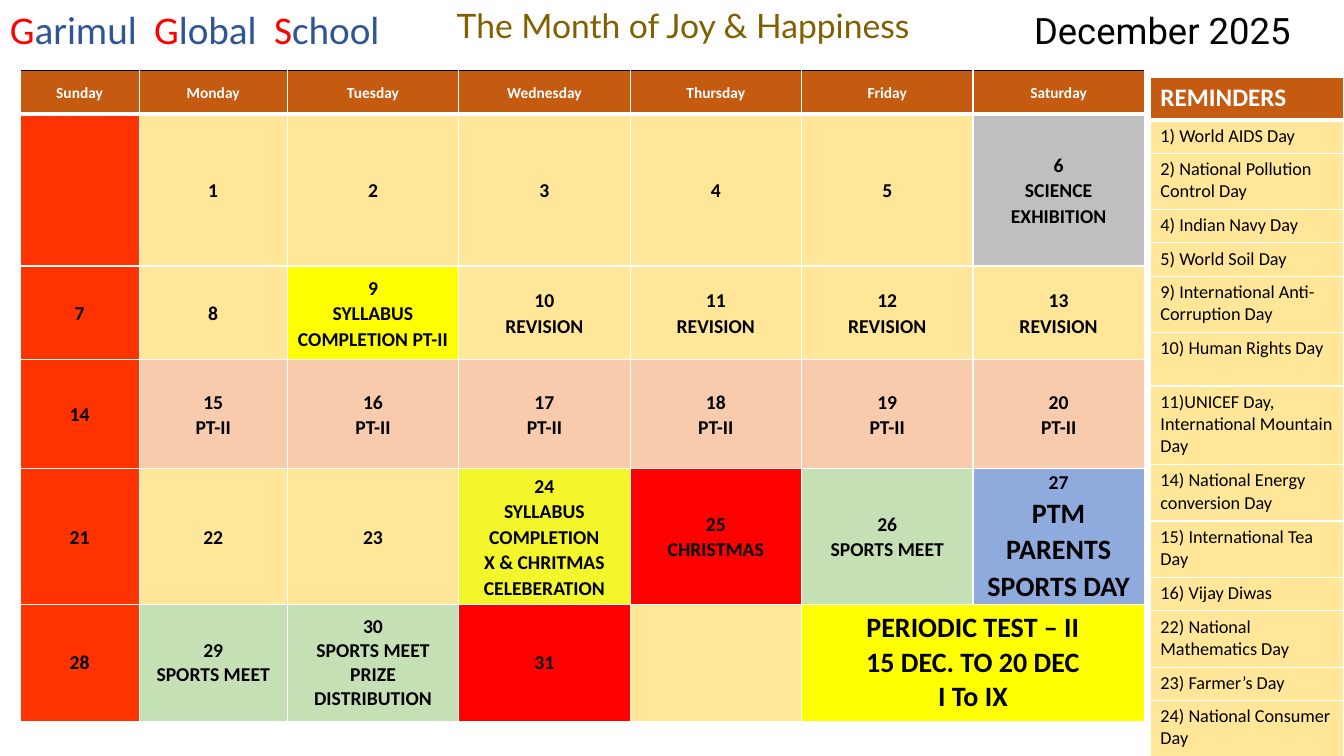
from dataclasses import dataclass

from lxml.etree import SubElement
from pptx import Presentation
from pptx.dml.color import RGBColor
from pptx.enum.shapes import MSO_SHAPE
from pptx.enum.text import MSO_ANCHOR, MSO_AUTO_SIZE, PP_ALIGN
from pptx.oxml.ns import qn
from pptx.util import Inches, Pt

COLORS = {
    "white": "FFFFFF", "black": "000000", "header": "C55A11", "sunday": "FF3300",
    "plain": "FFE699", "exhibition": "BFBFBF", "syllabus": "FFFF00", "test": "F8CBAD",
    "celebration": "F4F62C", "holiday": "FF0000", "sports": "C5E0B4", "parents": "8FAADC",
    "gold": "806000", "initial": "FF0000", "navy": "2F5597",
}


@dataclass(frozen=True)
class TextStyle:
    """Look of a run and its paragraph."""

    size: float
    color: str = "black"
    bold: bool = False
    font: str = "Calibri"
    align: PP_ALIGN = PP_ALIGN.CENTER
    spacing: float = 1.0


@dataclass(frozen=True)
class Event:
    """What happens on a day and how its cell is filled."""

    fill: str
    notes: tuple[str, ...] = ()
    note_size: float = 14


WEEKDAYS = ["Sunday", "Monday", "Tuesday", "Wednesday", "Thursday", "Friday", "Saturday"]
DAY_WIDTHS = [1.18, 1.47] + [1.7] * 5
WEEK_HEIGHTS = [0.43, 1.51, 0.93, 1.08, 1.32, 1.16]
LAST_DAY = 31
EVENTS = {
    6: Event("exhibition", ("SCIENCE EXHIBITION",)),
    9: Event("syllabus", ("SYLLABUS COMPLETION PT-II",)),
    **{day: Event("plain", ("REVISION",)) for day in range(10, 14)},
    **{day: Event("test", ("PT-II",)) for day in range(15, 21)},
    24: Event("celebration", ("SYLLABUS COMPLETION", "X & CHRITMAS CELEBERATION")),
    25: Event("holiday", ("CHRISTMAS",)),
    26: Event("sports", ("SPORTS MEET",)),
    27: Event("parents", ("PTM PARENTS SPORTS DAY",), 20),
    29: Event("sports", ("SPORTS MEET",)),
    30: Event("sports", ("SPORTS MEET", "PRIZE DISTRIBUTION")),
    31: Event("holiday"),
}
TEST_NOTICE = ["PERIODIC TEST – II", "15 DEC. TO 20 DEC", "I To IX"]
REMINDERS = [
    ("1) World AIDS Day", 0.33),
    ("2) National Pollution Control Day", 0.56),
    ("4) Indian Navy Day", 0.33),
    ("5) World Soil Day", 0.33),
    ("9) International Anti-Corruption Day", 0.56),
    ("10) Human Rights Day", 0.53),
    ("11)UNICEF Day, International Mountain Day", 0.78),
    ("14) National Energy conversion Day", 0.56),
    ("15) International Tea Day", 0.56),
    ("16) Vijay Diwas", 0.33),
    ("22) National Mathematics Day", 0.56),
    ("23) Farmer’s Day", 0.33),
    ("24) National Consumer Day", 0.56),
]
SCHOOL_NAME = [("G", "arimul\t"), ("G", "lobal\t"), ("S", "chool")]
SCHOOL_TABS = [1.43, 2.62]


def rgb(name: str) -> RGBColor:
    """Look up a named colour."""
    return RGBColor.from_string(COLORS[name])


def add_span(para, text: str, style: TextStyle) -> None:
    """Add one formatted run."""
    span = para.add_run()
    span.text = text
    span.font.name = style.font
    span.font.size = Pt(style.size)
    span.font.bold = style.bold
    span.font.color.rgb = rgb(style.color)


def write_lines(frame, lines: list[tuple[str, TextStyle]]) -> None:
    """Write one paragraph for each styled line."""
    for index, (text, style) in enumerate(lines):
        para = frame.add_paragraph() if index else frame.paragraphs[0]
        para.alignment = style.align
        para.line_spacing = style.spacing
        add_span(para, text, style)


def set_borders(cell, top: float, bottom: float, top_color: str = "white") -> None:
    """Draw the four sides of a cell."""
    properties = cell._tc.get_or_add_tcPr()
    sides = [("lnL", 1, "white"), ("lnR", 1, "white"), ("lnT", top, top_color), ("lnB", bottom, "white")]
    for tag, width, color in sides:
        line = SubElement(properties, qn(f"a:{tag}"), w=str(Pt(width)))
        fill = SubElement(line, qn("a:solidFill"))
        SubElement(fill, qn("a:srgbClr"), val=COLORS[color])


def add_grid(page, left: float, top: float, widths: list[float], heights: list[float], header_top: str):
    """Add a bordered table with a thick rule under its header."""
    table = page.shapes.add_table(
        len(heights), len(widths), Inches(left), Inches(top), Inches(sum(widths)), Inches(sum(heights))
    ).table
    table.first_row = table.horz_banding = False
    for column, width in zip(table.columns, widths):
        column.width = Inches(width)
    for index, (row, height) in enumerate(zip(table.rows, heights)):
        row.height = Inches(height)
        for cell in row.cells:
            set_borders(cell, 3 if index == 1 else 1, 1 if index else 3, "white" if index else header_top)
    return table


def fill_cell(cell, fill: str, lines: list[tuple[str, TextStyle]]) -> None:
    """Colour a cell and write its lines."""
    cell.fill.solid()
    cell.fill.fore_color.rgb = rgb(fill)
    if lines:
        write_lines(cell.text_frame, lines)


def fill_day_cell(cell, fill: str, lines: list[tuple[str, TextStyle]]) -> None:
    """Fill a calendar cell, centred with narrow margins."""
    cell.vertical_anchor = MSO_ANCHOR.MIDDLE
    cell.margin_left = cell.margin_right = Inches(0.07)
    cell.margin_top = cell.margin_bottom = 0
    fill_cell(cell, fill, lines)


def add_calendar(page) -> None:
    """Add the month grid, numbering days by week and weekday."""
    table = add_grid(page, 0.2, 0.7, DAY_WIDTHS, WEEK_HEIGHTS, "black")
    header = TextStyle(11, "white", True, spacing=1.07)
    last_week = len(WEEK_HEIGHTS) - 2
    table.cell(last_week + 1, 5).merge(table.cell(last_week + 1, 6))
    for column, weekday in enumerate(WEEKDAYS):
        fill_day_cell(table.cell(0, column), "header", [(weekday, header)])
        for week in range(last_week + 1):
            cell = table.cell(week + 1, column)
            if cell.is_spanned:
                continue
            if cell.is_merge_origin:
                notice = TextStyle(20, bold=True)
                fill_day_cell(cell, "syllabus", [(text, notice) for text in TEST_NOTICE])
                continue
            day = 7 * week + column
            event = EVENTS.get(day, Event("plain" if column else "sunday"))
            spacing = 1.0 if week == last_week else 1.07
            lines = [(str(day), TextStyle(14, bold=True, spacing=spacing))]
            note = TextStyle(event.note_size, bold=True, spacing=spacing)
            lines += [(text, note) for text in event.notes]
            fill_day_cell(cell, event.fill, lines if 1 <= day <= LAST_DAY else [])


def add_reminders(page) -> None:
    """Add the list of special days."""
    heights = [0.42] + [height for _, height in REMINDERS]
    table = add_grid(page, 11.41, 0.77, [1.92], heights, "white")
    header = TextStyle(18, "white", True, align=PP_ALIGN.LEFT)
    entry = TextStyle(13, align=PP_ALIGN.LEFT)
    fill_cell(table.cell(0, 0), "header", [("REMINDERS", header)])
    for row, (text, _) in enumerate(REMINDERS, start=1):
        fill_cell(table.cell(row, 0), "plain", [(text, entry)])


def add_motto(page) -> None:
    """Place the title in the middle of the top band."""
    title = page.shapes.title
    title.left, title.top, title.width, title.height = Inches(3.79), 0, Inches(5.97), Inches(0.5)
    title.text_frame.auto_size = MSO_AUTO_SIZE.NONE
    title.text_frame.vertical_anchor = MSO_ANCHOR.TOP
    write_lines(title.text_frame, [("The Month of Joy & Happiness", TextStyle(24, "gold", font="Lato"))])


def add_month(page) -> None:
    """Add the month label at the top right."""
    box = page.shapes.add_shape(MSO_SHAPE.RECTANGLE, Inches(9.73), 0, Inches(3.6), Inches(0.55))
    box.shadow.inherit = False
    box.fill.solid()
    box.fill.fore_color.rgb = rgb("white")
    box.line.fill.background()
    box.text_frame.vertical_anchor = MSO_ANCHOR.TOP
    write_lines(box.text_frame, [("December 2025", TextStyle(26, font="Roboto", spacing=1.07))])


def add_school(page) -> None:
    """Add the school name with red initials."""
    box = page.shapes.add_textbox(0, 0, Inches(4.08), Inches(0.48))
    box.text_frame.word_wrap = True
    para = box.text_frame.paragraphs[0]
    tabs = SubElement(para._p.get_or_add_pPr(), qn("a:tabLst"))
    for position in SCHOOL_TABS:
        SubElement(tabs, qn("a:tab"), pos=str(Inches(position)), algn="l")
    for initial, rest in SCHOOL_NAME:
        add_span(para, initial, TextStyle(28, "initial"))
        add_span(para, rest, TextStyle(28, "navy"))


def main() -> None:
    """Build the calendar slide."""
    deck = Presentation()
    deck.slide_width, deck.slide_height = Inches(13.33), Inches(7.5)
    page = deck.slides.add_slide(deck.slide_layouts.get_by_name("Title Only"))
    add_calendar(page)
    add_motto(page)
    add_month(page)
    add_school(page)
    add_reminders(page)
    deck.save("out.pptx")


if __name__ == "__main__":
    main()
